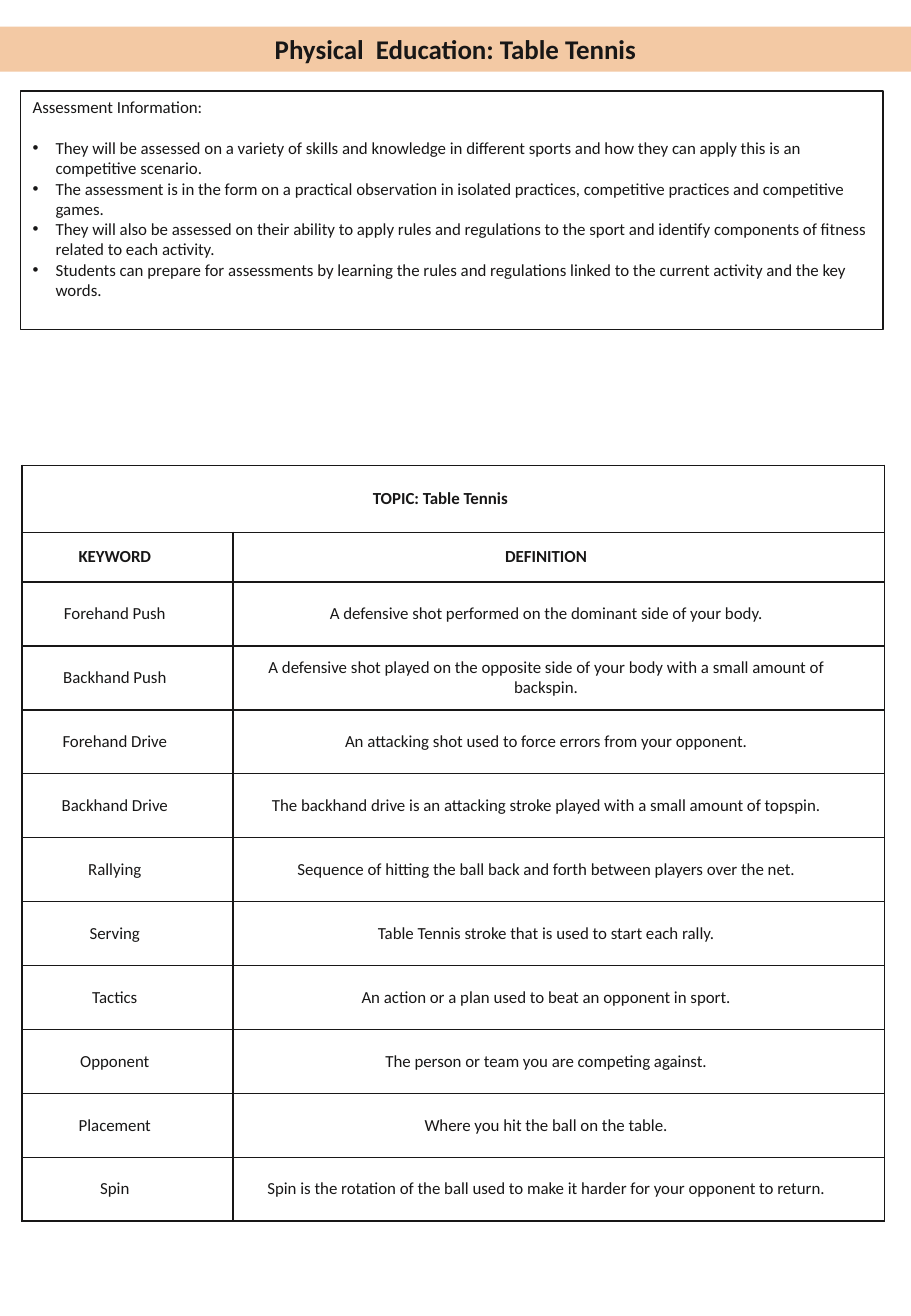
from dataclasses import dataclass

from lxml import etree
from pptx import Presentation
from pptx import util as u
from pptx.dml import color
from pptx.enum import shapes, text
from pptx.oxml import ns


@dataclass(frozen=True)
class Theme:
    font: str = "Calibri"
    ink: color.RGBColor = color.RGBColor.from_string("181717")
    band: color.RGBColor = color.RGBColor.from_string("F3C9A4")
    title: int = 16
    body: int = 10
    box_line: float = 0.75
    cell_line: float = 1


THEME = Theme()

ASSESSMENT = [
    "They will be assessed on a variety of skills and knowledge in different sports and how they can apply this is an competitive scenario.",
    "The assessment is in the form on a practical observation in isolated practices, competitive practices and competitive games.",
    "They will also be assessed on their ability to apply rules and regulations to the sport and identify components of fitness related to each activity.",
    "Students can prepare for assessments by learning the rules and regulations linked to the current activity and the key words.",
]

KEYWORDS = [
    ("Forehand Push", "A defensive shot performed on the dominant side of your body."),
    ("Backhand Push", "A defensive shot played on the opposite side of your body with a small amount of backspin."),
    ("Forehand Drive", "An attacking shot used to force errors from your opponent."),
    ("Backhand Drive", "The backhand drive is an attacking stroke played with a small amount of topspin."),
    ("Rallying", "Sequence of hitting the ball back and forth between players over the net."),
    ("Serving", "Table Tennis stroke that is used to start each rally."),
    ("Tactics", "An action or a plan used to beat an opponent in sport."),
    ("Opponent", "The person or team you are competing against."),
    ("Placement", "Where you hit the ball on the table."),
    ("Spin", "Spin is the rotation of the ball used to make it harder for your opponent to return."),
]


def add_run(p, words, size=THEME.body, bold=False):
    r = p.add_run()
    r.text = words
    r.font.name = THEME.font
    r.font.size = u.Pt(size)
    r.font.bold = bold
    r.font.color.rgb = THEME.ink


def add_box(s, left, top, width, height, anchor):
    sp = s.shapes.add_shape(
        shapes.MSO_SHAPE.RECTANGLE,
        *(u.Inches(v) for v in (left, top, width, height)))
    sp.shadow.inherit = False
    sp.text_frame.word_wrap = True
    sp.text_frame.vertical_anchor = anchor
    return sp


def add_title(s, words):
    sp = add_box(s, 0, 0.22, 7.5, 0.37, text.MSO_ANCHOR.MIDDLE)
    sp.fill.solid()
    sp.fill.fore_color.rgb = THEME.band
    sp.line.fill.background()
    p = sp.text_frame.paragraphs[0]
    p.alignment = text.PP_ALIGN.CENTER
    add_run(p, words, THEME.title, True)


def add_bullet(p):
    pPr = p._p.get_or_add_pPr()
    pPr.set("marL", str(u.Inches(0.19)))
    pPr.set("indent", str(u.Inches(-0.19)))
    etree.SubElement(pPr, ns.qn("a:buFont"), typeface="Arial")
    etree.SubElement(pPr, ns.qn("a:buChar"), char="•")


def add_assessment(s, heading, points):
    sp = add_box(s, 0.17, 0.75, 7.1, 1.96, text.MSO_ANCHOR.TOP)
    sp.fill.background()
    sp.line.color.rgb = THEME.ink
    sp.line.width = u.Pt(THEME.box_line)
    tf = sp.text_frame
    p = tf.paragraphs[0]
    p.alignment = text.PP_ALIGN.LEFT
    p.space_after = u.Pt(12)
    add_run(p, heading)
    for point in points:
        p = tf.add_paragraph()
        p.alignment = text.PP_ALIGN.LEFT
        add_bullet(p)
        add_run(p, point)


def add_borders(cell):
    tcPr = cell._tc.get_or_add_tcPr()
    for side in ("a:lnL", "a:lnR", "a:lnT", "a:lnB"):
        ln = etree.SubElement(tcPr, ns.qn(side), w=str(u.Pt(THEME.cell_line)))
        fill = etree.SubElement(ln, ns.qn("a:solidFill"))
        etree.SubElement(fill, ns.qn("a:srgbClr"), val=str(THEME.ink))


def fill_cell(cell, words, bold):
    cell.vertical_anchor = text.MSO_ANCHOR.MIDDLE
    cell.margin_left = cell.margin_right = u.Inches(0.07)
    cell.margin_top = cell.margin_bottom = 0
    add_borders(cell)
    cell.fill.background()
    if words:
        p = cell.text_frame.paragraphs[0]
        p.alignment = text.PP_ALIGN.CENTER
        p.space_after = u.Pt(6)
        p._p.get_or_add_pPr().set("marR", str(u.Inches(0.21)))
        add_run(p, words, bold=bold)


def add_keyword_table(s, topic, keywords):
    rows = [(topic, ""), ("KEYWORD", "DEFINITION"), *keywords]
    height, topic_height, header_height = 6.22, 0.55, 0.41
    row_height = (height - topic_height - header_height) / len(keywords)
    table = s.shapes.add_table(
        len(rows), 2, u.Inches(0.18), u.Inches(3.83),
        u.Inches(7.1), u.Inches(height)).table
    table.first_row = table.horz_banding = False
    for column, width in zip(table.columns, (1.74, 5.36)):
        column.width = u.Inches(width)
    heights = [topic_height, header_height] + [row_height] * len(keywords)
    for i, (row, row_words) in enumerate(zip(table.rows, rows)):
        row.height = u.Inches(heights[i])
        for cell, words in zip(row.cells, row_words):
            fill_cell(cell, words, bold=i < 2)
    table.cell(0, 0).merge(table.cell(0, 1))


def main():
    prs = Presentation()
    prs.slide_width = u.Inches(7.5)
    prs.slide_height = u.Inches(10.83)
    s = prs.slides.add_slide(prs.slide_layouts[6])
    add_title(s, "Physical  Education: Table Tennis")
    add_keyword_table(s, "TOPIC: Table Tennis", KEYWORDS)
    add_assessment(s, "Assessment Information:", ASSESSMENT)
    prs.save("out.pptx")


if __name__ == "__main__":
    main()
